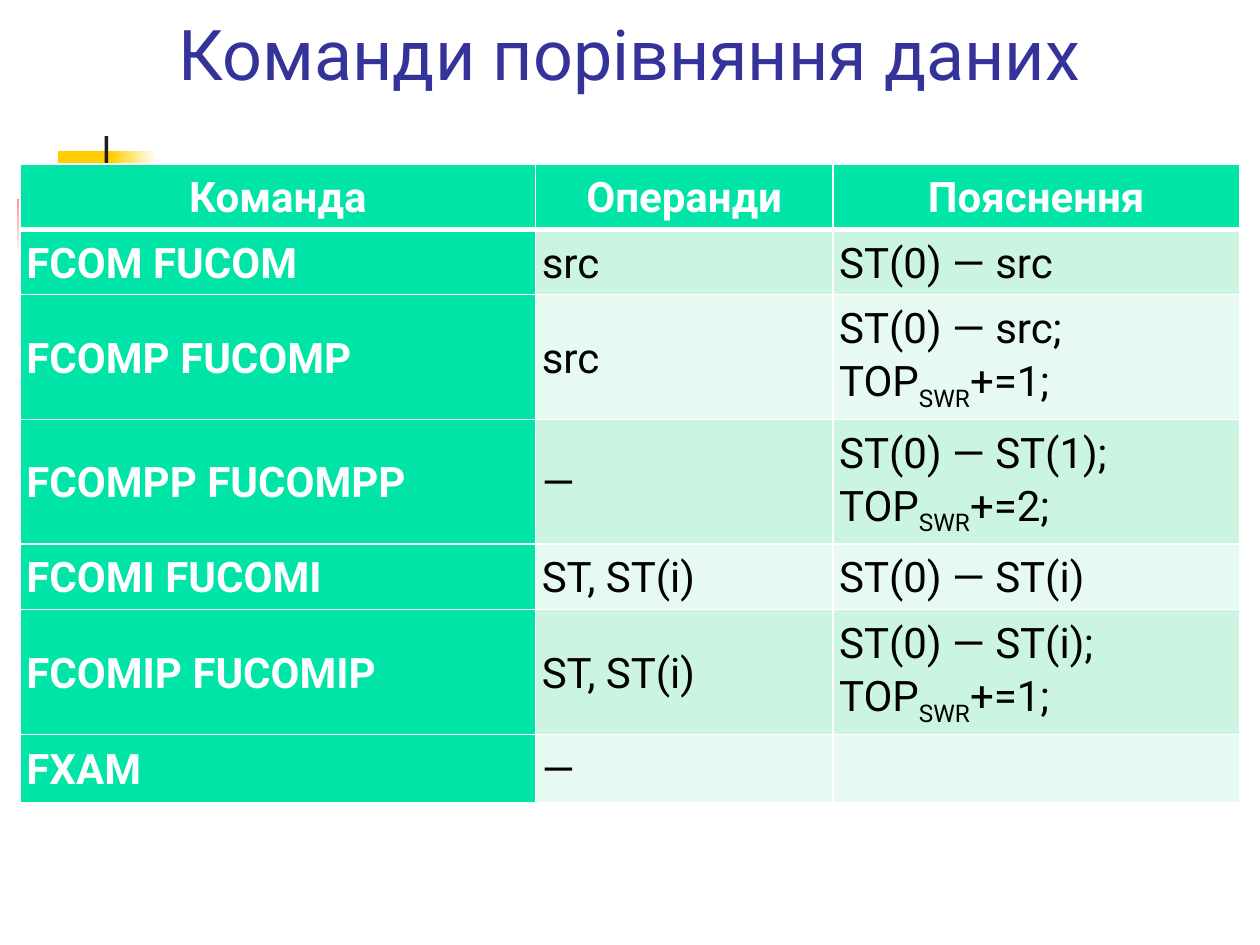
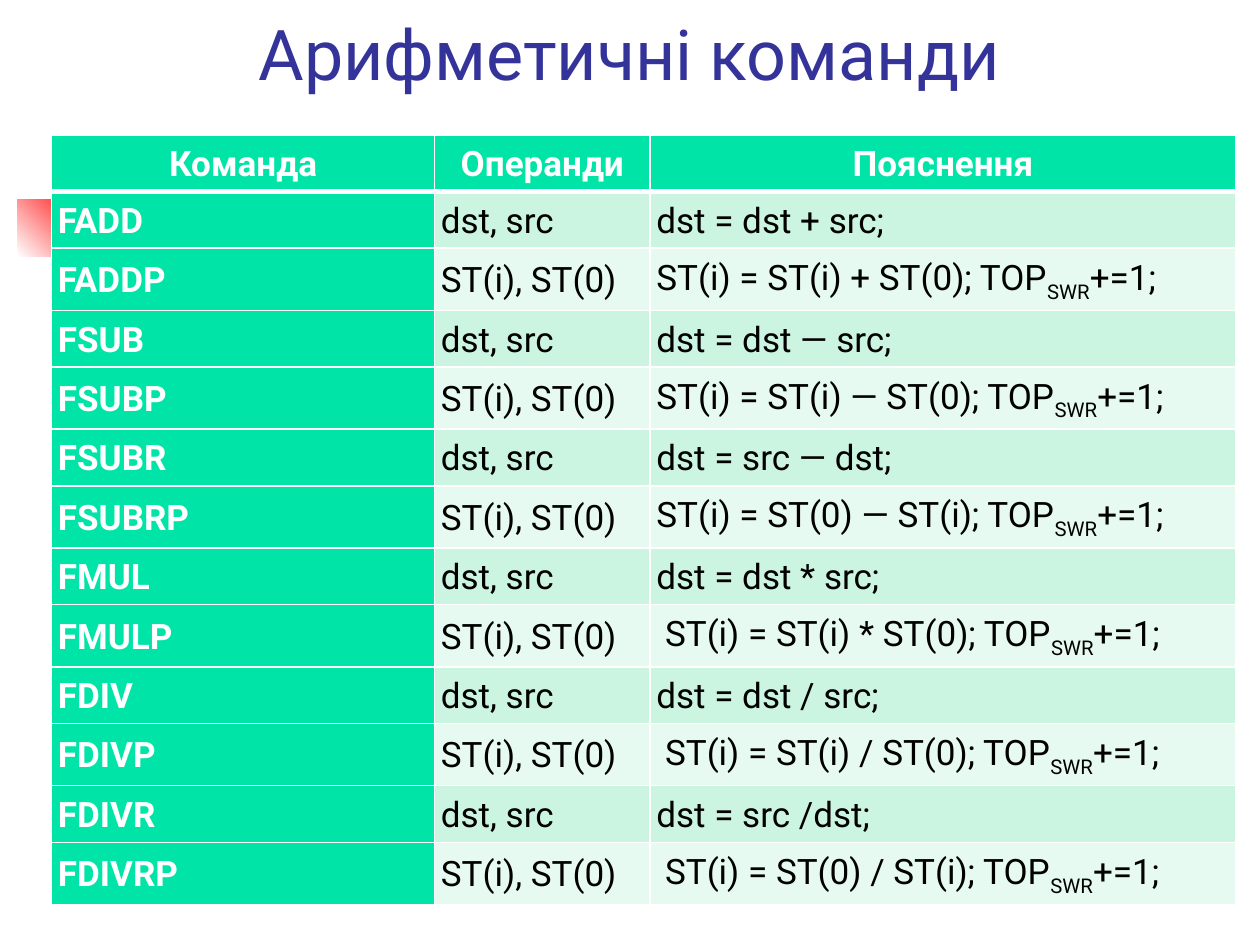
from typing import NamedTuple

from pptx import Presentation
from pptx.dml.color import RGBColor
from pptx.enum.shapes import MSO_SHAPE
from pptx.enum.text import MSO_ANCHOR, MSO_AUTO_SIZE, PP_ALIGN
from pptx.oxml import parse_xml
from pptx.oxml.ns import nsdecls
from pptx.util import Inches, Pt

# Shared look
FONT = "Roboto"
WHITE, BLACK, INK = "FFFFFF", "000000", "1C1C1C"
TITLE_COLOUR = "333399"
YELLOW, BLUE, RED = "FFCF01", "3333CC", "FF0000"
HEAD_FILL = "00E4A8"
BAND_FILLS = ("CCF5E1", "E7FAF1")
HEADINGS = ("Команда", "Операнди", "Пояснення")
SUBSCRIPT = "SWR"


class Block(NamedTuple):
    left: float
    top: float
    width: float
    height: float
    start: str
    end: str = ""
    angle: int = 0


class CommandTable(NamedTuple):
    title: str
    left: float
    top: float
    columns: tuple[float, ...]
    row_height: float
    last_height: float
    size: int
    rows: list[tuple[str, str, str]]


MOTIF = [
    Block(0.46, 1.2, 0.48, 0.52, YELLOW),
    Block(0.88, 1.2, 0.36, 0.52, YELLOW, WHITE),
    Block(0.59, 1.66, 0.46, 0.52, BLUE),
    Block(1, 1.66, 0.4, 0.52, BLUE, WHITE),
    Block(0.14, 1.58, 0.61, 0.46, WHITE, RED, 45),
    Block(0.83, 1.08, 0.03, 1.15, INK),
    Block(0.48, 1.95, 9, 0.03, INK, WHITE),
]

COMPARISON = CommandTable(
    "Команди порівняння даних", 0.16, 1.3, (4.09, 2.36, 3.23), 0.51, 0.54, 24,
    [
        ("FCOM FUCOM", "src", "ST(0) — src"),
        ("FCOMP FUCOMP", "src", "ST(0) — src; TOPSWR+=1;"),
        ("FCOMPP FUCOMPP", "—", "ST(0) — ST(1); TOPSWR+=2;"),
        ("FCOMI FUCOMI", "ST, ST(i)", "ST(0) — ST(i)"),
        ("FCOMIP FUCOMIP", "ST, ST(i)", "ST(0) — ST(i); TOPSWR+=1;"),
        ("FXAM", "—", ""),
    ],
)

# Each operation has a plain form and a form that pops the stack
OPERATIONS = [
    ("FADD", "dst = dst + src;", "ST(i) = ST(i) + ST(0);"),
    ("FSUB", "dst = dst — src;", "ST(i) = ST(i) — ST(0);"),
    ("FSUBR", "dst = src — dst;", "ST(i) = ST(0) — ST(i);"),
    ("FMUL", "dst = dst * src;", " ST(i) = ST(i) * ST(0);"),
    ("FDIV", "dst = dst / src;", " ST(i) = ST(i) / ST(0);"),
    ("FDIVR", "dst = src /dst;", " ST(i) = ST(0) / ST(i);"),
]

ARITHMETIC = CommandTable(
    "Арифметичні команди", 0.41, 1.07, (3.04, 1.71, 4.65), 0.34, 0.34, 20,
    [
        row
        for name, plain, popping in OPERATIONS
        for row in (
            (name, "dst, src", plain),
            (name + "P", "ST(i), ST(0)", popping + " TOPSWR+=1;"),
        )
    ],
)


def rgb(colour: str) -> RGBColor:
    return RGBColor.from_string(colour)


def add_run(p, text: str, size: int, colour: str, bold: bool = False):
    r = p.add_run()
    r.text = text
    r.font.name, r.font.size, r.font.bold = FONT, Pt(size), bold
    r.font.color.rgb = rgb(colour)
    return r


def add_block(s, block: Block) -> None:
    box = (Inches(v) for v in block[:4])
    sp = s.shapes.add_shape(MSO_SHAPE.RECTANGLE, *box)
    sp.shadow.inherit = False
    sp.line.fill.background()
    if not block.end:
        sp.fill.solid()
        sp.fill.fore_color.rgb = rgb(block.start)
        return
    sp.fill.gradient()
    sp.fill.gradient_angle = block.angle
    for stop, colour in zip(sp.fill.gradient_stops, (block.start, block.end)):
        stop.color.rgb = rgb(colour)


def add_title(s, text: str) -> None:
    sp = s.shapes.title
    sp.left, sp.top, sp.width, sp.height = (Inches(v) for v in (0.43, -0.8, 9.13, 1.6))
    tf = sp.text_frame
    tf.auto_size = MSO_AUTO_SIZE.NONE
    tf.vertical_anchor = MSO_ANCHOR.BOTTOM
    p = tf.paragraphs[0]
    p.alignment = PP_ALIGN.CENTER
    add_run(p, text, 40, TITLE_COLOUR)


def set_borders(cell, top: int, bottom: int) -> None:
    tc_pr = cell._tc.get_or_add_tcPr()
    widths = {"lnL": 1, "lnR": 1, "lnT": top, "lnB": bottom}
    for i, (tag, width) in enumerate(widths.items()):
        tc_pr.insert(i, parse_xml(
            f'<a:{tag} {nsdecls("a")} w="{Pt(width)}"><a:solidFill>'
            f'<a:srgbClr val="{WHITE}"/></a:solidFill></a:{tag}>'
        ))


def fill_cell(cell, text: str, row: int, column: int, size: int) -> None:
    heading = row == 0 or column == 0
    cell.fill.solid()
    cell.fill.fore_color.rgb = rgb(HEAD_FILL if heading else BAND_FILLS[(row - 1) % 2])
    set_borders(cell, 3 if row == 1 else 1, 3 if row == 0 else 1)
    cell.vertical_anchor = MSO_ANCHOR.MIDDLE
    cell.margin_left = cell.margin_right = Inches(0.05)
    cell.margin_top = cell.margin_bottom = Inches(0.05)
    p = cell.text_frame.paragraphs[0]
    p.line_spacing, p.space_after = 1.07, Pt(8)
    if row == 0:
        p.alignment = PP_ALIGN.CENTER
    for part in text.partition(SUBSCRIPT):
        if part:
            r = add_run(p, part, size, WHITE if heading else BLACK, heading)
            if part == SUBSCRIPT:
                r.font._element.set("baseline", "-25000")


def add_command_table(s, spec: CommandTable) -> None:
    rows = [HEADINGS, *spec.rows]
    heights = [spec.row_height] * len(spec.rows) + [spec.last_height]
    table = s.shapes.add_table(
        len(rows), len(HEADINGS), Inches(spec.left), Inches(spec.top),
        Inches(sum(spec.columns)), Inches(sum(heights)),
    ).table
    for column, width in zip(table.columns, spec.columns):
        column.width = Inches(width)
    for i, (texts, height) in enumerate(zip(rows, heights)):
        table.rows[i].height = Inches(height)
        for j, text in enumerate(texts):
            fill_cell(table.cell(i, j), text, i, j, spec.size)


def main() -> None:
    prs = Presentation()
    prs.slide_width, prs.slide_height = Inches(10), Inches(7.5)
    for spec in (COMPARISON, ARITHMETIC):
        s = prs.slides.add_slide(prs.slide_layouts[5])
        for block in MOTIF:
            add_block(s, block)
        add_title(s, spec.title)
        add_command_table(s, spec)
    prs.save("out.pptx")


if __name__ == "__main__":
    main()
